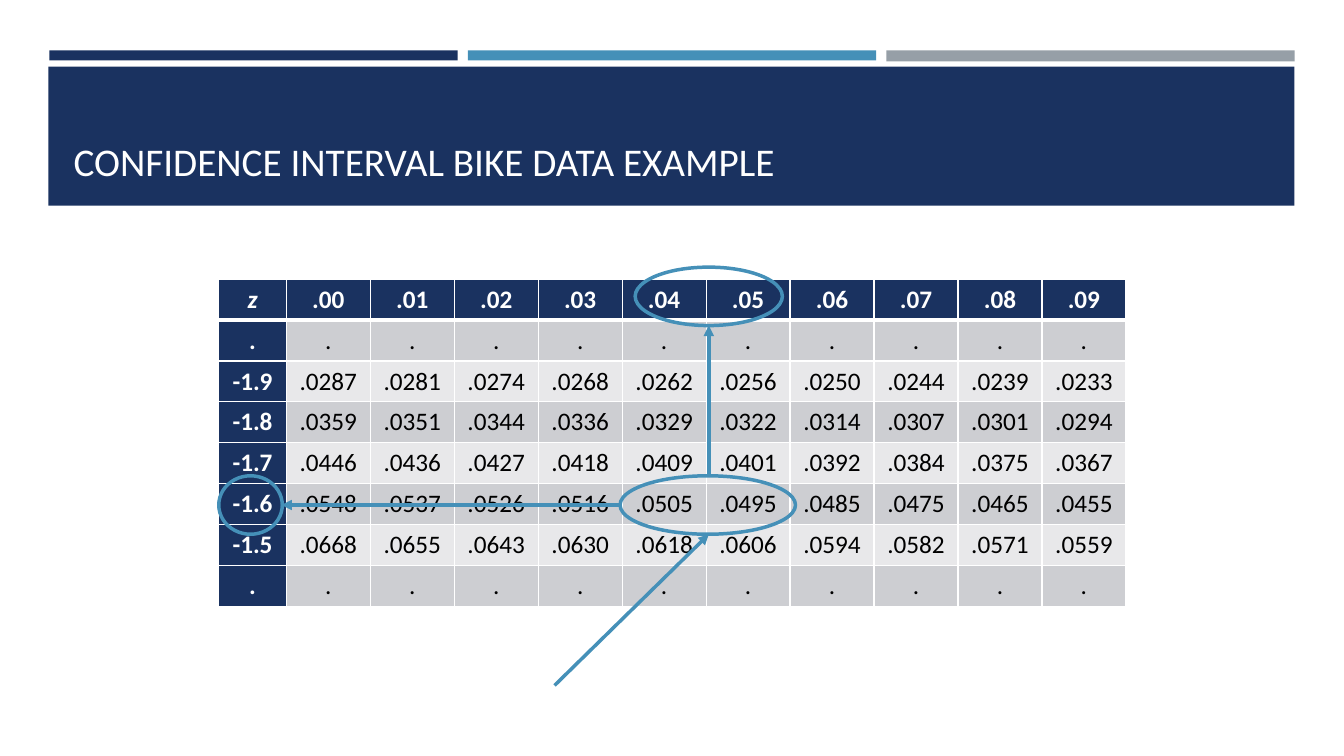
from dataclasses import dataclass

from lxml import etree
from pptx import Presentation
from pptx import util as u
from pptx.dml.color import RGBColor
from pptx.enum import shapes, text
from pptx.oxml import ns

PX = 9144  # one px is a hundredth of an inch
NAVY, BLUE, GRAY = "1A3260", "4590B8", "969FA7"
WHITE, BLACK, DARK, LIGHT = "FFFFFF", "000000", "CDCED2", "E8E8EA"


@dataclass
class Box:
    x: int
    y: int
    w: int
    h: int
    fill: str = ""


@dataclass
class Arrow:
    x1: int
    y1: int
    x2: int
    y2: int


BARS = [
    Box(49, 50, 405, 10, NAVY),
    Box(879, 50, 405, 11, GRAY),
    Box(464, 50, 405, 10, BLUE),
    Box(48, 66, 1236, 138, NAVY),
]
RINGS = [Box(630, 265, 146, 58), Box(217, 472, 63, 58), Box(615, 472, 174, 58)]
ARROWS = [
    Arrow(703, 472, 703, 323),
    Arrow(615, 501, 279, 501),
    Arrow(550, 680, 703, 530),
]
DOTS = [". " * 11]
ROWS = [row.split() for row in [
    "z .00 .01 .02 .03 .04 .05 .06 .07 .08 .09",
    *DOTS,
    "-1.9 .0287 .0281 .0274 .0268 .0262 .0256 .0250 .0244 .0239 .0233",
    "-1.8 .0359 .0351 .0344 .0336 .0329 .0322 .0314 .0307 .0301 .0294",
    "-1.7 .0446 .0436 .0427 .0418 .0409 .0401 .0392 .0384 .0375 .0367",
    "-1.6 .0548 .0537 .0526 .0516 .0505 .0495 .0485 .0475 .0465 .0455",
    "-1.5 .0668 .0655 .0643 .0630 .0618 .0606 .0594 .0582 .0571 .0559",
    *DOTS,
]]


def px(n: int) -> u.Emu:
    return u.Emu(n * PX)


def rgb(code: str) -> RGBColor:
    return RGBColor.from_string(code)


def write(frame, words: str, *, size: int, color: str, bold: bool = False,
          italic: bool = False, align=text.PP_ALIGN.LEFT) -> None:
    frame.text = words
    para = frame.paragraphs[0]
    para.alignment = align
    font = para.runs[0].font
    font.name, font.size = "Calibri", u.Pt(size)
    font.bold, font.italic = bold, italic
    font.color.rgb = rgb(color)


def draw(slide, kind, box: Box) -> None:
    shape = slide.shapes.add_shape(kind, px(box.x), px(box.y), px(box.w), px(box.h))
    shape.shadow.inherit = False
    if box.fill:
        shape.fill.solid()
        shape.fill.fore_color.rgb = rgb(box.fill)
        shape.line.fill.background()
    else:
        shape.fill.background()
        shape.line.color.rgb = rgb(BLUE)
        shape.line.width = u.Pt(2.5)


def point(slide, arrow: Arrow) -> None:
    line = slide.shapes.add_connector(
        shapes.MSO_CONNECTOR.STRAIGHT,
        px(arrow.x1), px(arrow.y1), px(arrow.x2), px(arrow.y2))
    line.line.color.rgb = rgb(BLUE)
    line.line.width = u.Pt(2.5)
    etree.SubElement(line.line._get_or_add_ln(), ns.qn("a:tailEnd"), type="triangle")
    etree.SubElement(line.element.spPr, ns.qn("a:effectLst"))


def edge(cell, side: str, width: float) -> None:
    ln = etree.SubElement(cell._tc.get_or_add_tcPr(), ns.qn(f"a:ln{side}"),
                          w=str(u.Pt(width)))
    fill = etree.SubElement(ln, ns.qn("a:solidFill"))
    etree.SubElement(fill, ns.qn("a:srgbClr"), val=WHITE)


def grid(slide) -> None:
    table = slide.shapes.add_table(
        len(ROWS), len(ROWS[0]), px(217), px(277), px(900), px(324)).table
    table.first_col = True
    for c, col in enumerate(table.columns):
        col.width = px(833) // 10 if c else px(67)
    for r, row in enumerate(ROWS):
        for c, words in enumerate(row):
            cell = table.cell(r, c)
            head = r == 0 or c == 0
            # Borders go before the fill; a thick rule parts the header
            for side in "LRTB":
                thick = (r, side) in ((0, "B"), (1, "T"))
                edge(cell, side, 3 if thick else 1)
            cell.fill.solid()
            cell.fill.fore_color.rgb = rgb(NAVY if head else DARK if r % 2 else LIGHT)
            cell.vertical_anchor = text.MSO_ANCHOR.MIDDLE
            write(cell.text_frame, words, size=18, color=WHITE if head else BLACK,
                  bold=head, italic=words == "z", align=text.PP_ALIGN.CENTER)


def main() -> None:
    deck = Presentation()
    deck.slide_width, deck.slide_height = px(1333), px(750)
    slide = deck.slides.add_slide(deck.slide_layouts[5])

    # Bars and banner
    for bar in BARS:
        draw(slide, shapes.MSO_SHAPE.RECTANGLE, bar)

    # Title, brought in front of the banner
    title = slide.shapes.title
    title.left, title.top, title.width, title.height = px(63), px(80), px(1206), px(108)
    title.text_frame.vertical_anchor = text.MSO_ANCHOR.BOTTOM
    write(title.text_frame, "CONFIDENCE INTERVAL BIKE DATA EXAMPLE", size=28, color=WHITE)
    title.element.getparent().append(title.element)

    # Table of z values
    grid(slide)

    # Rings and arrows
    for ring in RINGS:
        draw(slide, shapes.MSO_SHAPE.OVAL, ring)
    for arrow in ARROWS:
        point(slide, arrow)

    deck.save("out.pptx")


if __name__ == "__main__":
    main()
